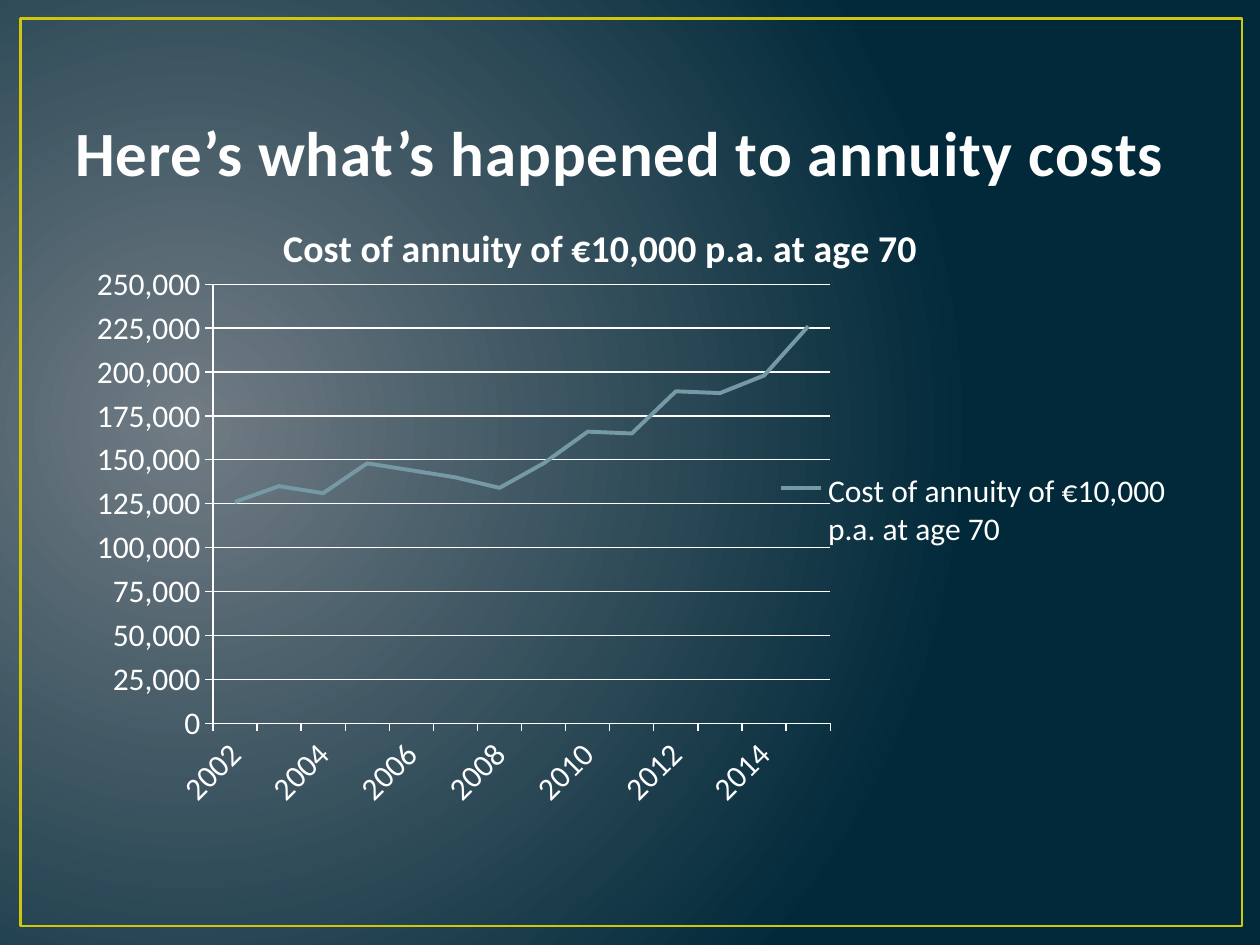
from dataclasses import dataclass

from lxml.etree import SubElement
from pptx import Presentation
from pptx.chart.data import CategoryChartData
from pptx.dml.color import RGBColor as Rgb
from pptx.enum.chart import XL_CHART_TYPE as ChartType
from pptx.enum.chart import XL_LEGEND_POSITION as LegendSide
from pptx.enum.chart import XL_TICK_MARK as Tick
from pptx.enum.shapes import MSO_SHAPE as Shape
from pptx.enum.text import MSO_ANCHOR as Anchor
from pptx.oxml import parse_xml
from pptx.oxml.ns import nsdecls, qn
from pptx.util import Cm, Pt


@dataclass(frozen=True)
class Theme:
    font: str = "Calibri"
    glow: str = "717C84"
    night: str = "01293A"
    frame: str = "CFC60D"
    title: str = "FEFEFE"
    title_edge: str = "384F55"
    chart_text: str = "FFFFFF"
    series: str = "759AA5"
    title_size: float = 36
    chart_size: float = 18
    chart_title_size: float = 21.6


@dataclass(frozen=True)
class Area:
    left: float
    top: float
    width: float
    height: float

    def place(self) -> tuple:
        return Cm(self.left), Cm(self.top), Cm(self.width), Cm(self.height)


THEME = Theme()
FRAME = Area(0.41, 0.38, 24.63, 18.29)
TITLE = Area(1.27, 0.76, 22.86, 3.18)
CHART = Area(0.3, 3.94, 23.62, 12.7)
PLOT = {"x": 0.169, "y": 0.141, "w": 0.527, "h": 0.697}

SERIES_NAME = "Cost of annuity of €10,000 p.a. at age 70"
FIRST_YEAR = 2002
COSTS_IN_THOUSANDS = (126, 135, 131, 148, 144, 140, 134,
                      148, 166, 165, 189, 188, 198, 226)


def style_font(font, size: float, color: str, bold: bool = False) -> None:
    font.name = THEME.font
    font.size = Pt(size)
    font.bold = bold
    font.color.rgb = Rgb.from_string(color)


def paint_background(page) -> None:
    fill = page.background.fill
    fill.gradient()
    for stop, color in zip(fill.gradient_stops, (THEME.glow, THEME.night)):
        stop.color.rgb = Rgb.from_string(color)
    # Turn the linear gradient into a circular one
    linear = next(page.element.iter(qn("a:lin")))
    linear.getparent().replace(linear, parse_xml(
        f'<a:path {nsdecls("a")} path="circle">'
        '<a:fillToRect l="15000" t="50000" r="85000" b="60000"/></a:path>'))


def draw_frame(page, area: Area) -> None:
    box = page.shapes.add_shape(Shape.RECTANGLE, *area.place())
    box.shadow.inherit = False
    box.fill.background()
    box.line.color.rgb = Rgb.from_string(THEME.frame)
    box.line.width = Pt(1.5)


def draw_title(page, area: Area, text: str) -> None:
    frame = page.shapes.add_textbox(*area.place()).text_frame
    frame.word_wrap = True
    frame.vertical_anchor = Anchor.BOTTOM
    span = frame.paragraphs[0].add_run()
    span.text = text
    style_font(span.font, THEME.title_size, THEME.title, bold=True)
    # Letter spacing and thin outline
    props = span.font._element
    props.set("spc", "50")
    props.insert(0, parse_xml(
        f'<a:ln {nsdecls("a")} w="13335"><a:solidFill>'
        f'<a:srgbClr val="{THEME.title_edge}"/></a:solidFill></a:ln>'))


def style_line(line, color: str, width: float) -> None:
    line.color.rgb = Rgb.from_string(color)
    line.width = Pt(width)


def fix_plot_area(chart) -> None:
    plot_area = chart.plots[0]._element.getparent()
    layout = plot_area.find(qn("c:layout"))
    if layout is None:
        layout = plot_area.makeelement(qn("c:layout"))
        plot_area.insert(0, layout)
    manual = SubElement(layout, qn("c:manualLayout"))
    settings = {"layoutTarget": "inner", "xMode": "edge", "yMode": "edge", **PLOT}
    for name, value in settings.items():
        SubElement(manual, qn(f"c:{name}")).set("val", str(value))


def draw_chart(page, area: Area) -> None:
    data = CategoryChartData(number_format="#,##0")
    data.categories = [str(FIRST_YEAR + step) for step in range(len(COSTS_IN_THOUSANDS))]
    data.add_series(SERIES_NAME, [cost * 1000 for cost in COSTS_IN_THOUSANDS])
    chart = page.shapes.add_chart(ChartType.LINE, *area.place(), data).chart
    style_font(chart.font, THEME.chart_size, THEME.chart_text)
    fix_plot_area(chart)

    # Heading and legend
    chart.has_title = True
    span = chart.chart_title.text_frame.paragraphs[0].add_run()
    span.text = SERIES_NAME
    style_font(span.font, THEME.chart_title_size, THEME.chart_text, bold=True)
    chart.has_legend = True
    chart.legend.position = LegendSide.RIGHT
    chart.legend.include_in_layout = False

    # Axes
    years, costs = chart.category_axis, chart.value_axis
    for axis in (years, costs):
        axis.major_tick_mark = Tick.OUTSIDE
        axis.minor_tick_mark = Tick.NONE
        style_line(axis.format.line, THEME.chart_text, 0.75)
        style_font(axis.tick_labels.font, THEME.chart_size, THEME.chart_text)
    years._element.find(qn("c:txPr")).find(qn("a:bodyPr")).set("rot", "-2700000")
    costs.minimum_scale, costs.maximum_scale, costs.major_unit = 0, 250000, 25000
    costs.tick_labels.number_format = "#,##0"
    costs.tick_labels.number_format_is_linked = False
    costs.has_major_gridlines = True
    style_line(costs.major_gridlines.format.line, THEME.chart_text, 0.75)

    # Series
    plot = chart.plots[0]
    plot.vary_by_categories = False
    series = plot.series[0]
    series.smooth = False
    style_line(series.format.line, THEME.series, 2.25)


def main() -> None:
    deck = Presentation()
    deck.slide_width, deck.slide_height = Cm(25.4), Cm(19.05)
    page = deck.slides.add_slide(deck.slide_layouts[6])
    paint_background(page)
    draw_frame(page, FRAME)
    draw_title(page, TITLE, "Here’s what’s happened to annuity costs")
    draw_chart(page, CHART)
    deck.save("out.pptx")


if __name__ == "__main__":
    main()
